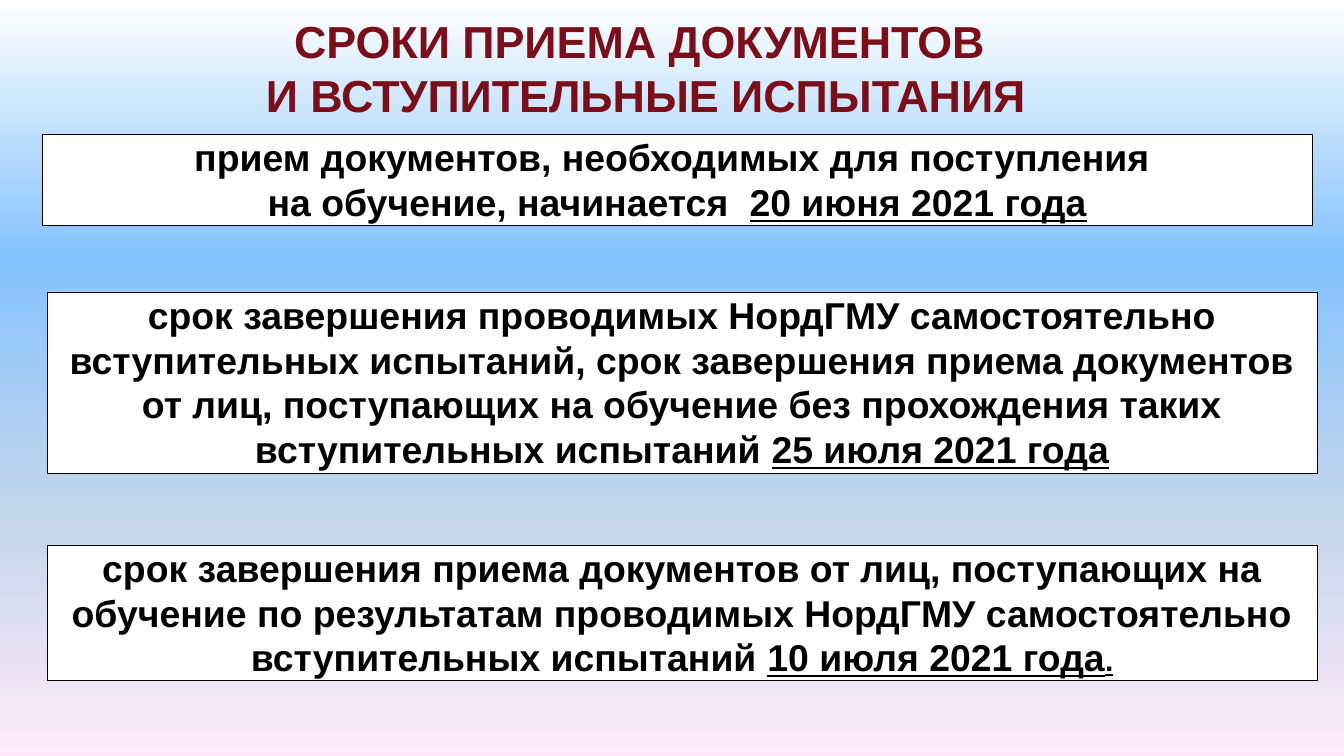
import copy
import pptx
import pptx.util
import pptx.dml.color
import pptx.enum.shapes
import pptx.enum.text
import pptx.oxml.ns

RGBColor = pptx.dml.color.RGBColor
MAROON = RGBColor(0x7B, 0x0F, 0x19)
BLACK = RGBColor(0, 0, 0)
WHITE = RGBColor(255, 255, 255)
SKY = RGBColor(0x85, 0xC2, 0xFF)
MIST = RGBColor(0xC4, 0xD6, 0xEB)
ROSE = RGBColor(0xFF, 0xEB, 0xFA)
GRADIENT = [(0, WHITE), (34, SKY), (68, MIST), (100, ROSE)]

deck = pptx.Presentation()
deck.slide_width = pptx.util.Inches(10)
deck.slide_height = deck.slide_width * 9 // 16
page = deck.slides.add_slide(deck.slide_layouts[6])
COLUMN = deck.slide_width / 100
ROW = deck.slide_height / 100

backdrop = page.background.fill
backdrop.gradient()
backdrop.gradient_angle = 270
stop_list = page.element.find(".//" + pptx.oxml.ns.qn("a:gsLst"))
while len(stop_list) < len(GRADIENT):
    stop_list.append(copy.deepcopy(stop_list[-1]))
for stop, (share, color) in zip(backdrop.gradient_stops, GRADIENT):
    stop.position = share / 100
    stop.color.rgb = color


def place(left, top, width, height):
    return [int(n) for n in (left * COLUMN, top * ROW, width * COLUMN, height * ROW)]


def write(box, paragraphs, size, color):
    frame = box.text_frame
    settings = {"word_wrap": True, "vertical_anchor": pptx.enum.text.MSO_ANCHOR.TOP}
    for name, value in settings.items():
        setattr(frame, name, value)
    for index, spans in enumerate(paragraphs):
        para = frame.paragraphs[0] if index == 0 else frame.add_paragraph()
        para.alignment = pptx.enum.text.PP_ALIGN.CENTER
        for text, changes in spans:
            span = para.add_run()
            span.text = text
            look = {"name": "Arial", "size": pptx.util.Pt(size), "bold": True} | changes
            for name, value in look.items():
                setattr(span.font, name, value)
            span.font.color.rgb = color


DATE = {"underline": True}
title = page.shapes.add_textbox(*place(3.14, 1, 89.8, 12.62))
write(title, [
    [("СРОКИ ПРИЕМА ДОКУМЕНТОВ ", {})],
    [("И ВСТУПИТЕЛЬНЫЕ ИСПЫТАНИЯ", {})],
], 24, MAROON)

notices = [
    (3.14, 17.8, 11.97, [
        [("прием документов, необходимых для поступления ", {})],
        [("на обучение, начинается  ", {}), ("20 июня 2021 года", DATE)],
    ]),
    (3.5, 38.63, 23.94, [
        [("срок завершения проводимых НордГМУ самостоятельно вступительных испытаний, "
          "срок завершения приема документов от лиц, поступающих на обучение "
          "без прохождения таких вступительных испытаний ", {}),
         ("25 июля 2021 года", DATE)],
    ]),
    (3.5, 72.08, 17.95, [
        [("срок завершения приема документов от лиц, поступающих на обучение "
          "по результатам проводимых НордГМУ самостоятельно вступительных испытаний ", {}),
         ("10 июля 2021 года", DATE),
         (".", DATE | {"size": pptx.util.Pt(16)})],
    ]),
]
for left, top, height, paragraphs in notices:
    box = page.shapes.add_shape(
        pptx.enum.shapes.MSO_SHAPE.RECTANGLE, *place(left, top, 94.5, height))
    box.shadow.inherit = False
    box.fill.solid()
    box.fill.fore_color.rgb = WHITE
    box.line.color.rgb = BLACK
    box.line.width = pptx.util.Pt(0.25)
    margins = {"margin_top": 0, "margin_bottom": 0,
               "auto_size": pptx.enum.text.MSO_AUTO_SIZE.SHAPE_TO_FIT_TEXT}
    for name, value in margins.items():
        setattr(box.text_frame, name, value)
    write(box, paragraphs, 20, BLACK)

deck.save("out.pptx")
